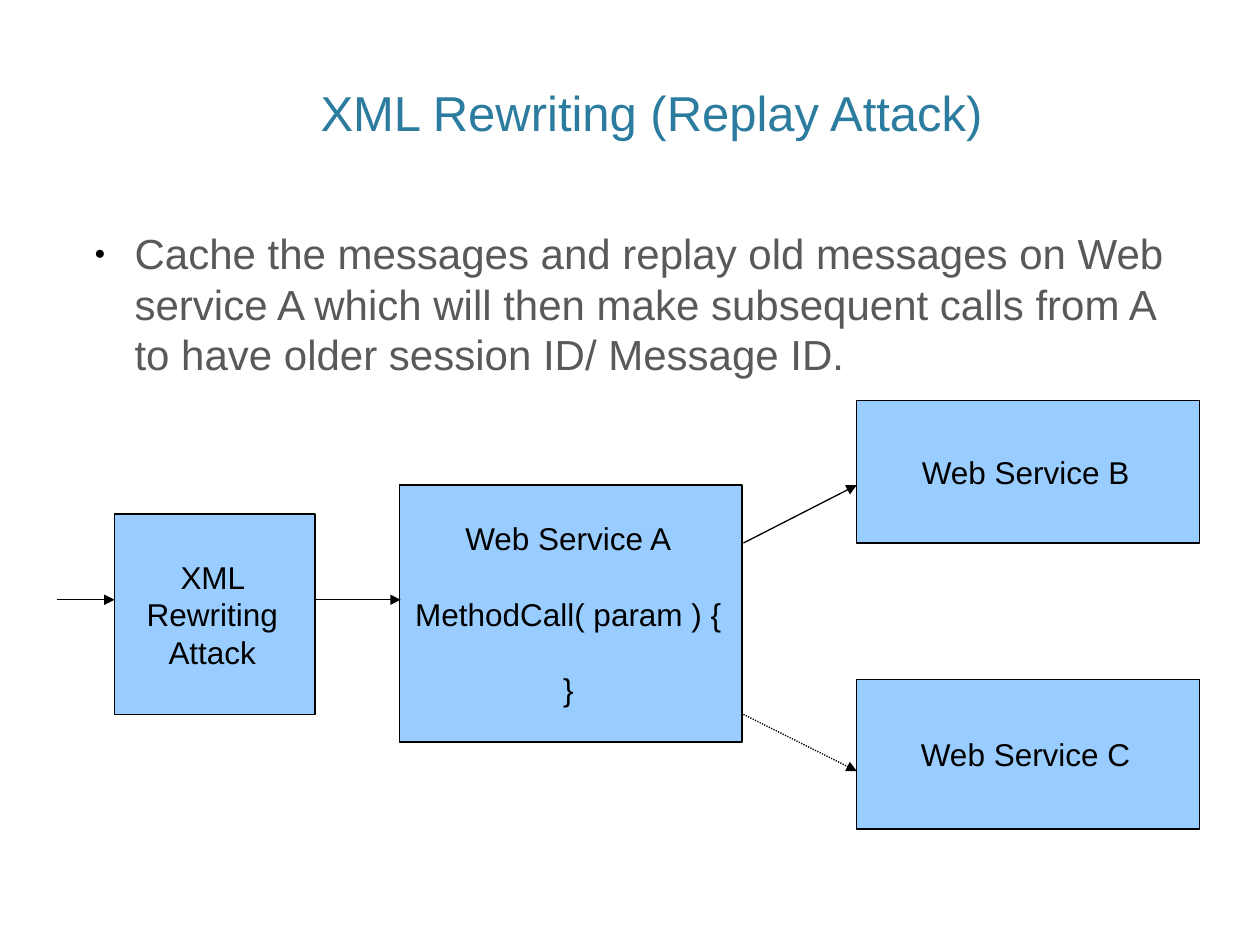
from lxml.etree import SubElement
from pptx import Presentation
from pptx.dml.color import RGBColor
from pptx.enum.dml import MSO_LINE
from pptx.enum.shapes import MSO_CONNECTOR, MSO_SHAPE
from pptx.enum.text import MSO_ANCHOR, PP_ALIGN
from pptx.oxml.ns import qn
from pptx.util import Inches, Pt

BLACK = RGBColor(0x00, 0x00, 0x00)
TITLE_BLUE = RGBColor(0x2C, 0x7C, 0x9F)
BODY_GRAY = RGBColor(0x59, 0x59, 0x59)
BOX_BLUE = RGBColor(0x99, 0xCC, 0xFF)

FONT = "Arial"
LINE_WIDTH = Pt(0.75)
BOX_MARGINS = (0.05, 0.04, 0.09, 0.04)


def write_text(shape, *lines, size=18, color=BLACK, align=PP_ALIGN.CENTER,
               anchor=MSO_ANCHOR.MIDDLE, margins=BOX_MARGINS,
               line_height=21.5, gap=0):
    """Fill a shape with one formatted paragraph for each line."""
    frame = shape.text_frame
    frame.word_wrap = True
    frame.vertical_anchor = anchor
    (frame.margin_left, frame.margin_top,
     frame.margin_right, frame.margin_bottom) = map(Inches, margins)
    for index, line in enumerate(lines):
        para = frame.add_paragraph() if index else frame.paragraphs[0]
        para.alignment = align
        para.line_spacing = Pt(line_height)
        para.space_before = Pt(gap if index else 0)
        span = para.add_run()
        span.text = line
        span.font.name = FONT
        span.font.size = Pt(size)
        span.font.color.rgb = color


def add_text(page, left, top, width, height, *lines, **text_format):
    box = page.shapes.add_textbox(*map(Inches, (left, top, width, height)))
    write_text(box, *lines, **text_format)
    return box


def add_bullet(para):
    """Give a paragraph a small black dot and a hanging indent."""
    properties = para._p.get_or_add_pPr()
    properties.set("marL", str(Inches(0.47)))
    properties.set("indent", str(Inches(-0.32)))
    color = SubElement(properties, qn("a:buClr"))
    SubElement(color, qn("a:srgbClr"), val=str(BLACK))
    SubElement(properties, qn("a:buSzPct"), val="44000")
    SubElement(properties, qn("a:buFont"), typeface=FONT)
    SubElement(properties, qn("a:buChar"), char="●")


def add_service_box(page, left, top, width, height, *lines, **text_format):
    box = page.shapes.add_shape(
        MSO_SHAPE.RECTANGLE, *map(Inches, (left, top, width, height)))
    box.shadow.inherit = False
    box.fill.solid()
    box.fill.fore_color.rgb = BOX_BLUE
    box.line.color.rgb = BLACK
    box.line.width = LINE_WIDTH
    write_text(box, *lines, **text_format)


def add_arrow(page, start, end, dash=None):
    arrow = page.shapes.add_connector(
        MSO_CONNECTOR.STRAIGHT, *map(Inches, start + end))
    arrow.line.color.rgb = BLACK
    arrow.line.width = LINE_WIDTH
    if dash is not None:
        arrow.line.dash_style = dash
    SubElement(arrow.line._get_or_add_ln(), qn("a:tailEnd"), type="triangle")
    SubElement(arrow._element.spPr, qn("a:effectLst"))


def main():
    deck = Presentation()
    deck.slide_width, deck.slide_height = Inches(10), Inches(7.5)
    page = deck.slides.add_slide(deck.slide_layouts[6])

    # Title and explanation
    add_text(page, 0.67, 0, 9, 1.16, "XML Rewriting (Replay Attack)",
             size=28, color=TITLE_BLUE, anchor=MSO_ANCHOR.BOTTOM,
             margins=(0.06, 0.04, 0.06, 0.04), line_height=33)
    body = add_text(
        page, 0.5, 1.76, 9, 5.74,
        "Cache the messages and replay old messages on Web service A which "
        "will then make subsequent calls from A to have older session ID/ "
        "Message ID.",
        size=24, color=BODY_GRAY, align=PP_ALIGN.LEFT, anchor=MSO_ANCHOR.TOP,
        margins=(0.1, 0.05, 0.14, 0.05), line_height=28.8)
    add_bullet(body.text_frame.paragraphs[0])

    # Attack and services
    add_service_box(page, 3.17, 3.85, 2.72, 2.04, "Web Service A",
                    "MethodCall( param ) {", "}", gap=21.5)
    add_service_box(page, 6.8, 3.18, 2.72, 1.13, "Web Service B")
    add_service_box(page, 6.8, 5.39, 2.72, 1.19, "Web Service C")
    add_service_box(page, 0.91, 4.08, 1.59, 1.59, "XML Rewriting", "Attack")

    # Message flow
    add_arrow(page, (5.9, 4.31), (6.8, 3.85))
    add_arrow(page, (5.9, 5.67), (6.8, 6.12), dash=MSO_LINE.ROUND_DOT)
    add_arrow(page, (2.49, 4.76), (3.18, 4.76))
    add_arrow(page, (0.45, 4.76), (0.91, 4.76))

    deck.save("out.pptx")


if __name__ == "__main__":
    main()
